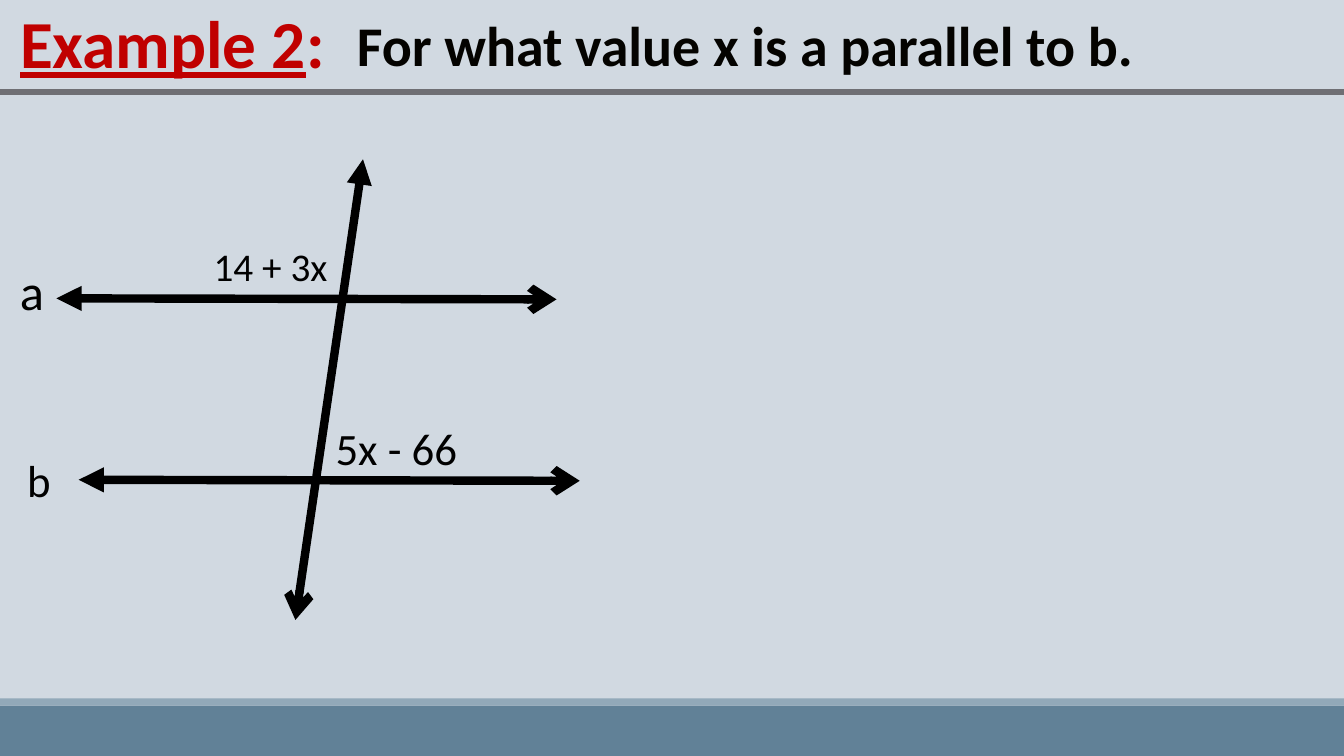
from pptx import Presentation
from pptx.dml.color import RGBColor
from pptx.enum.shapes import MSO_CONNECTOR as Connector, MSO_SHAPE as Shape
from pptx.enum.text import MSO_ANCHOR as Anchor, PP_ALIGN as Align
from pptx.oxml.ns import qn
from pptx.util import Inches, Pt
from lxml.etree import SubElement

COLORS = {
    "background": "D1D9E1",
    "footer": "618197",
    "footer_edge": "92A9B9",
    "title": "C00000",
    "question": "040300",
    "rule": "6F6F74",
    "diagram": "000000",
}


class LessonSlide:
    font = "Calibri"

    def __init__(self, slide):
        self.slide = slide
        self.paint(slide.background.fill, "background")

    def paint(self, fill, color):
        fill.solid()
        fill.fore_color.rgb = RGBColor.from_string(COLORS[color])

    def style(self, paragraph, size, color, bold):
        paragraph.alignment = Align.LEFT
        paragraph.font.name = self.font
        paragraph.font.size = Pt(size)
        paragraph.font.bold = bold
        paragraph.font.color.rgb = RGBColor.from_string(COLORS[color])

    def place(self, shape, box):
        shape.left, shape.top, shape.width, shape.height = map(Inches, box)

    def title(self, underlined, rest, box, size):
        heading = self.slide.shapes.title
        self.place(heading, box)
        frame = heading.text_frame
        frame.word_wrap = True
        frame.vertical_anchor = Anchor.MIDDLE
        paragraph = frame.paragraphs[0]
        for text, underline in ((underlined, True), (rest, False)):
            run = paragraph.add_run()
            run.text = text
            run.font.underline = underline
        paragraph.line_spacing = 0.9
        self.style(paragraph, size, "title", True)

    def text(self, words, box, size, color="diagram", bold=False):
        frame = self.slide.shapes.add_textbox(*map(Inches, box)).text_frame
        frame.word_wrap = True
        frame.text = words
        self.style(frame.paragraphs[0], size, color, bold)

    def band(self, box, color):
        strip = self.slide.shapes.add_shape(Shape.RECTANGLE, *map(Inches, box))
        strip.shadow.inherit = False
        self.paint(strip.fill, color)
        strip.line.fill.background()

    def line(self, start, end, color="diagram", width=6, arrows=True):
        stroke = self.slide.shapes.add_connector(
            Connector.STRAIGHT, *map(Inches, start + end))
        stroke.line.width = Pt(width)
        self.paint(stroke.line.fill, color)
        if arrows:
            outline = stroke.line._get_or_add_ln()
            SubElement(outline, qn("a:headEnd"), type="triangle")
            SubElement(outline, qn("a:tailEnd"), type="arrow")
        SubElement(stroke._element.spPr, qn("a:effectLst"))


def main():
    deck = Presentation()
    deck.slide_width, deck.slide_height = Inches(13.33), Inches(7.5)
    lesson = LessonSlide(deck.slides.add_slide(deck.slide_layouts[5]))

    lesson.band((0, 7, 13.33, 0.5), "footer")
    lesson.band((0, 6.93, 13.33, 0.07), "footer_edge")

    lesson.title("Example 2", ":", (0.1, -0.08, 3.51, 1.08), 48)
    lesson.text("For what value x is a parallel to b.",
                (3.44, 0.06, 9.22, 0.77), 40, "question", True)
    lesson.line((13.33, 0.91), (0, 0.91), "rule", 4.5, arrows=False)

    lesson.line((3.6, 1.58), (2.93, 6.15))
    lesson.line((0.56, 2.96), (5.52, 2.97))
    lesson.line((0.78, 4.76), (5.75, 4.77))

    lesson.text("a", (0.1, 2.53, 0.9, 0.71), 36)
    lesson.text("b", (0.17, 4.44, 0.9, 0.64), 32)
    lesson.text("14 + 3x", (2.02, 2.35, 1.88, 0.57), 28)
    lesson.text("5x - 66", (3.23, 4.12, 1.97, 0.64), 32)

    deck.save("out.pptx")


if __name__ == "__main__":
    main()
